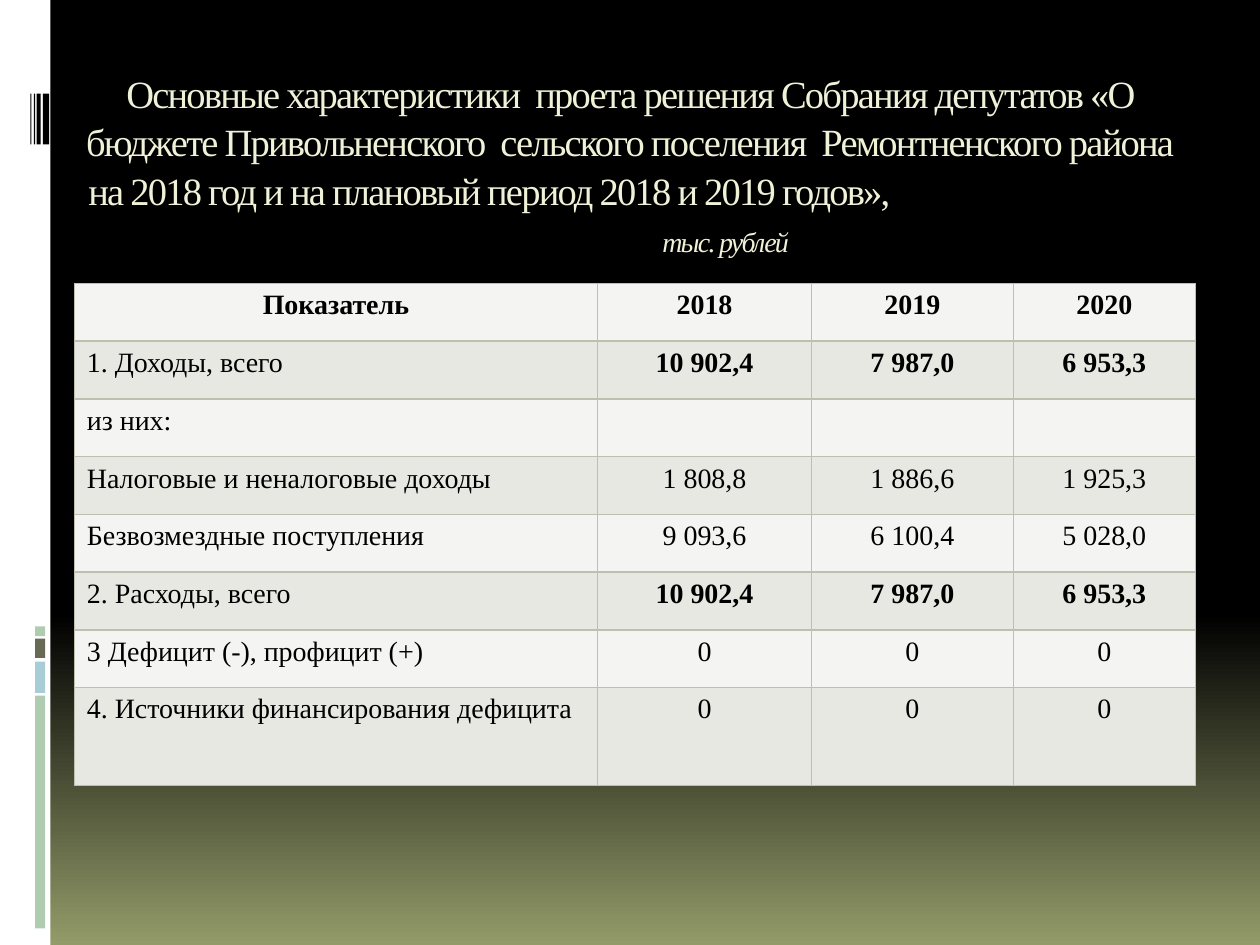
"""Build a budget summary slide with a side ornament, a title and a table."""
from dataclasses import dataclass

from lxml.etree import SubElement
from pptx import Presentation
from pptx.dml.color import RGBColor
from pptx.enum.shapes import MSO_SHAPE
from pptx.enum.text import MSO_ANCHOR, PP_ALIGN
from pptx.oxml.ns import qn
from pptx.slide import Slide
from pptx.table import _Cell
from pptx.util import Pt


@dataclass(frozen=True)
class Theme:
    font: str = "Times New Roman"
    title_size: float = 22
    body_size: float = 16
    title: str = "F0F2D7"
    text: str = "000000"
    dark: str = "000000"
    glow: str = "939B69"
    paper: str = "FFFFFF"
    green: str = "B0CCB0"
    blue: str = "A8CDD7"
    olive: str = "676A55"
    border: str = "C0BEAF"
    bands: tuple[str, str] = ("F4F4F2", "E8E8E3")


@dataclass(frozen=True)
class Block:
    left: float
    top: float
    width: float
    height: float
    color: str


@dataclass(frozen=True)
class TitleLine:
    text: str
    size: float
    alignment: PP_ALIGN
    indent: float = 0
    space_before: float = 0
    italic: bool = False


@dataclass(frozen=True)
class Row:
    label: str
    values: tuple[str, ...]
    bold_values: bool = False
    header: bool = False
    height: float = 33


THEME = Theme()

BLOCKS = (
    Block(0, 0, 28.8, 540, THEME.paper),
    Block(20, 397.5, 5.8, 133, THEME.green),
    Block(20, 378, 5.8, 18, THEME.blue),
    Block(20, 365, 5.8, 11, THEME.olive),
    Block(20, 358, 5.8, 5.5, THEME.green),
    *(Block(left, 53.5, width, 29, THEME.dark)
      for left, width in ((24.5, 3.6), (21, 2.2), (19.4, 0.7), (17.3, 0.7))),
)

TITLE_LINES = (
    TitleLine("Основные характеристики  проета решения Собрания депутатов «О "
              "бюджете Привольненского  сельского поселения  Ремонтненского района",
              THEME.title_size, PP_ALIGN.CENTER),
    TitleLine("на 2018 год и на плановый период 2018 и 2019 годов»,",
              THEME.title_size, PP_ALIGN.LEFT, indent=3),
    TitleLine("тыс. рублей", THEME.body_size, PP_ALIGN.LEFT,
              indent=331, space_before=6, italic=True),
)

COLUMN_WIDTHS = (299, 122.2, 115.4, 104)
TOTALS = ("10 902,4", "7 987,0", "6 953,3")
ZEROS = ("0",) * 3
ROWS = (
    Row("Показатель", ("2018", "2019", "2020"), bold_values=True, header=True),
    Row("1. Доходы, всего", TOTALS, bold_values=True),
    Row("из них:", ("",) * 3),
    Row("Налоговые и неналоговые доходы", ("1 808,8", "1 886,6", "1 925,3")),
    Row("Безвозмездные поступления", ("9 093,6", "6 100,4", "5 028,0")),
    Row("2. Расходы, всего", TOTALS, bold_values=True),
    Row("3 Дефицит (-), профицит (+)", ZEROS),
    Row("4. Источники финансирования дефицита", ZEROS, height=56),
)


def color(value: str) -> RGBColor:
    return RGBColor.from_string(value)


def paint_background(slide: Slide) -> None:
    fill = slide.background.fill
    fill.gradient()
    fill.gradient_angle = 270
    stops = ((0.65, THEME.dark), (1, THEME.glow))
    for stop, (position, value) in zip(fill.gradient_stops, stops):
        stop.position = position
        stop.color.rgb = color(value)


def draw_block(slide: Slide, block: Block) -> None:
    shape = slide.shapes.add_shape(MSO_SHAPE.RECTANGLE, Pt(block.left), Pt(block.top),
                                   Pt(block.width), Pt(block.height))
    shape.shadow.inherit = False
    shape.fill.solid()
    shape.fill.fore_color.rgb = color(block.color)
    shape.line.fill.background()


def draw_title(slide: Slide, lines: tuple[TitleLine, ...]) -> None:
    text_frame = slide.shapes.add_textbox(Pt(42.5), Pt(34), Pt(635), Pt(124)).text_frame
    text_frame.word_wrap = True
    text_frame.vertical_anchor = MSO_ANCHOR.TOP
    text_frame.margin_left = text_frame.margin_right = Pt(5)
    text_frame.margin_top = Pt(4.5)
    text_frame.text = "\n".join(line.text for line in lines)
    for paragraph, line in zip(text_frame.paragraphs, lines):
        paragraph.alignment = line.alignment
        paragraph.line_spacing = 1.05
        paragraph.space_before = Pt(line.space_before)
        properties = paragraph._p.get_or_add_pPr()
        properties.set("marL", str(Pt(line.indent)))
        properties.set("indent", "0")
        for run in paragraph.runs:
            run.font.name = THEME.font
            run.font.size = Pt(line.size)
            run.font.italic = line.italic
            run.font.color.rgb = color(THEME.title)
            run.font._element.set("spc", "-100")


def format_cell(cell: _Cell, text: str, fill: str, bold: bool, centered: bool) -> None:
    properties = cell._tc.get_or_add_tcPr()
    for side in ("a:lnL", "a:lnR", "a:lnT", "a:lnB"):
        line = SubElement(properties, qn(side), w=str(Pt(1)))
        SubElement(SubElement(line, qn("a:solidFill")), qn("a:srgbClr"), val=THEME.border)
    cell.fill.solid()
    cell.fill.fore_color.rgb = color(fill)
    cell.text_frame.text = text
    paragraph = cell.text_frame.paragraphs[0]
    paragraph.alignment = PP_ALIGN.CENTER if centered else PP_ALIGN.LEFT
    for run in paragraph.runs:
        run.font.name = THEME.font
        run.font.size = Pt(THEME.body_size)
        run.font.bold = bold
        run.font.color.rgb = color(THEME.text)


def draw_table(slide: Slide, rows: tuple[Row, ...]) -> None:
    table = slide.shapes.add_table(
        len(rows), len(COLUMN_WIDTHS), Pt(42.5), Pt(162), Pt(sum(COLUMN_WIDTHS)),
        Pt(sum(row.height for row in rows))).table
    table.first_row = table.horz_banding = False
    for column, width in zip(table.columns, COLUMN_WIDTHS):
        column.width = Pt(width)
    for index, row in enumerate(rows):
        table.rows[index].height = Pt(row.height)
        fill = THEME.bands[index % 2]
        format_cell(table.cell(index, 0), row.label, fill, row.header, row.header)
        for column, value in enumerate(row.values, start=1):
            format_cell(table.cell(index, column), value, fill, row.bold_values, True)


def main() -> None:
    presentation = Presentation()
    presentation.slide_width, presentation.slide_height = Pt(720), Pt(540)
    slide = presentation.slides.add_slide(presentation.slide_layouts[6])
    paint_background(slide)
    for block in BLOCKS:
        draw_block(slide, block)
    draw_title(slide, TITLE_LINES)
    draw_table(slide, ROWS)
    presentation.save("out.pptx")


if __name__ == "__main__":
    main()
